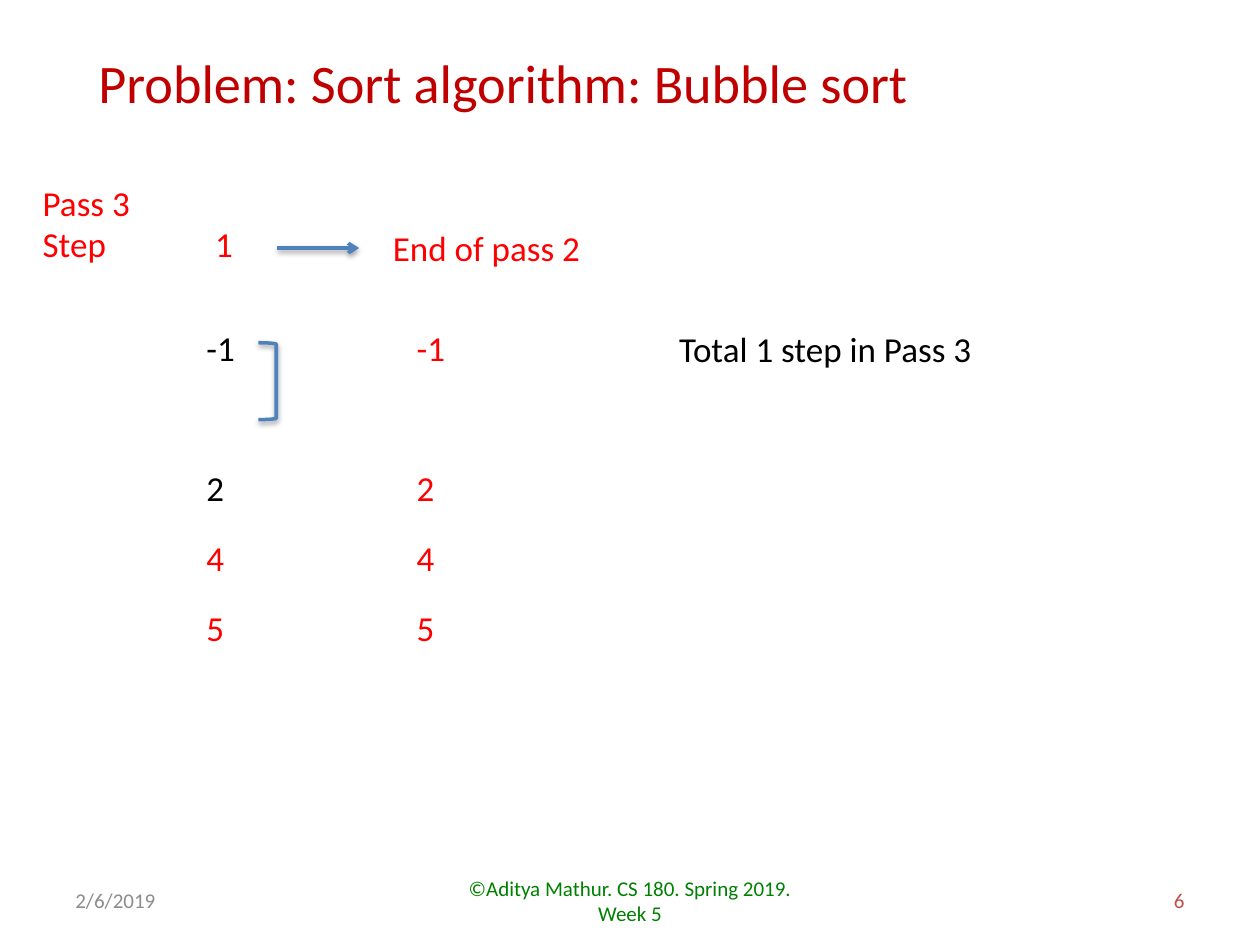
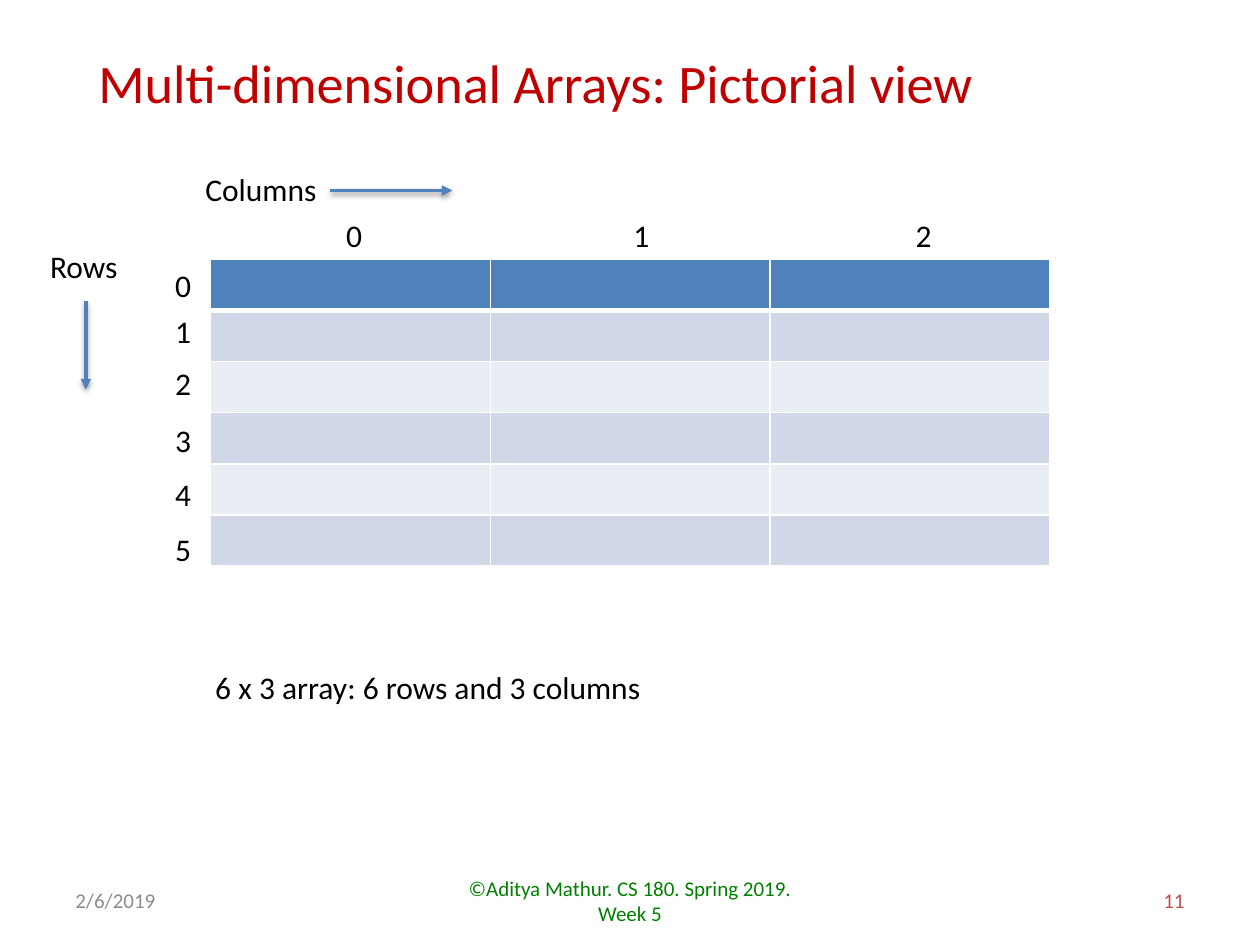
"""Two lecture slides: the last bubble sort pass and a picture of a 2D array."""
from pptx import Presentation
from pptx import util as u
from pptx.dml.color import RGBColor
from pptx.enum import shapes, text
from pptx.oxml import parse_xml
from pptx.oxml.ns import nsdecls

FONT = "Calibri"
BLACK, RED, BLUE, WHITE = "000000", "FF0000", "4F81BD", "FFFFFF"
TITLE, GREY, GREEN, BRICK = "C00000", "8C8C8C", "008000", "C0504D"
BANDS = ("D0D8E8", "E9EDF4")
TITLE_BOX = (1.73, 0.86, 22.73, 1.57)
ALIGN, ANCHOR = text.PP_ALIGN, text.MSO_ANCHOR
FOOTER_TEXT = "©Aditya Mathur. CS 180. Spring 2019. Week 5"


def rgb(value):
    """Turn a hex string into a colour."""
    return RGBColor.from_string(value)


def cm(*values):
    """Turn numbers into centimetre lengths."""
    return [u.Cm(v) for v in values]


def assign(obj, **values):
    """Set several attributes of an object."""
    for name, value in values.items():
        setattr(obj, name, value)


def write(p, words, size, color, **para):
    """Put one formatted run into a paragraph."""
    assign(p, **para)
    r = p.add_run()
    r.text = words
    assign(r.font, name=FONT, size=u.Pt(size), bold=False)
    r.font.color.rgb = rgb(color)


def label(slide, words, box, size=18, color=BLACK, wrap=False, anchor=ANCHOR.TOP, **para):
    """Add a text box with one paragraph."""
    tf = slide.shapes.add_textbox(*cm(*box)).text_frame
    assign(tf, word_wrap=wrap, vertical_anchor=anchor)
    write(tf.paragraphs[0], words, size, color, **para)
    return tf


def outline(sp):
    """Give a shape the blue line and its soft shadow."""
    sp.line.color.rgb = rgb(BLUE)
    sp.line.width = u.Pt(2)
    sp._element.spPr.append(parse_xml(
        f'<a:effectLst {nsdecls("a")}>'
        '<a:outerShdw blurRad="40000" dist="20000" dir="5400000" rotWithShape="0">'
        '<a:srgbClr val="000000"><a:alpha val="38000"/></a:srgbClr>'
        '</a:outerShdw></a:effectLst>'))


def arrow(slide, start, end, head="triangle"):
    """Draw a straight arrow between two points."""
    sp = slide.shapes.add_connector(shapes.MSO_CONNECTOR.STRAIGHT, *cm(*start, *end))
    outline(sp)
    sp.line._get_or_add_ln().append(parse_xml(f'<a:tailEnd {nsdecls("a")} type="{head}"/>'))


def frame(prs, title, number):
    """Start a slide with its title and footer."""
    slide = prs.slides.add_slide(prs.slide_layouts[5])
    sp = slide.shapes.title
    assign(sp, **dict(zip(("left", "top", "width", "height"), cm(*TITLE_BOX))))
    assign(sp.text_frame, word_wrap=True, vertical_anchor=ANCHOR.TOP,
           auto_size=text.MSO_AUTO_SIZE.NONE)
    write(sp.text_frame.paragraphs[0], title, 31, TITLE, alignment=ALIGN.LEFT)
    footer = (("2/6/2019", 1.27, 5.93, GREY, ALIGN.LEFT),
              (FOOTER_TEXT, 8.68, 8.04, GREEN, ALIGN.CENTER),
              (str(number), 18.2, 5.93, BRICK, ALIGN.RIGHT))
    for words, x, width, color, align in footer:
        label(slide, words, (x, 17.65, width, 1.01), 12, color, True,
              ANCHOR.MIDDLE, alignment=align)
    return slide


def value_column(slide, x, y, colors):
    """List the array values downwards, with a wider gap after the first."""
    spacing = {"line_spacing": u.Pt(40)}
    tf = label(slide, "-1", (x, y, 1.09, 5.87), 20, colors[0], **spacing)
    for words, color in zip("245", colors[1:]):
        write(tf.add_paragraph(), words, 20, color, **spacing)
    tf.paragraphs[1].space_before = u.Pt(40)


def sort_pass(slide, x, y):
    """Draw the single step of the pass and the result it leads to."""
    heads = (("Pass 3", 0, 0, 2.31), ("Step", 0, 0.84, 1.8),
             ("1", 3.48, 0.84, 0.86), ("End of pass 2", 7.06, 0.92, 4.32))
    for words, dx, dy, width in heads:
        label(slide, words, (x + dx, y + dy, width, 1.12), 20, RED)
    label(slide, "Total 1 step in Pass 3", (x + 12.83, y + 2.95, 6.55, 1.12), 20)
    value_column(slide, x + 3.3, y + 2.36, (BLACK, BLACK, RED, RED))
    value_column(slide, x + 7.54, y + 2.36, (RED,) * 4)
    sp = slide.shapes.add_shape(shapes.MSO_SHAPE.RIGHT_BRACKET,
                                *cm(x + 4.6, y + 3.38, 0.36, 1.55))
    sp.fill.background()
    outline(sp)
    arrow(slide, (x + 4.98, y + 1.47), (x + 6.63, y + 1.47), "arrow")


def style_cell(cell, fill, bottom):
    """Give a cell white borders and a fill."""
    tc_pr = cell._tc.get_or_add_tcPr()
    for side, width in zip("LRTB", (1, 1, 1, bottom)):
        tc_pr.append(parse_xml(
            f'<a:ln{side} {nsdecls("a")} w="{u.Pt(width)}"><a:solidFill>'
            f'<a:srgbClr val="{WHITE}"/></a:solidFill></a:ln{side}>'))
    cell.fill.solid()
    cell.fill.fore_color.rgb = rgb(fill)


def array_grid(slide, x, y, width, height, rows=6, cols=3):
    """Draw the array with its row and column indices."""
    table = slide.shapes.add_table(rows, cols, *cm(x, y, width, height)).table
    for i, row in enumerate(table.rows):
        for cell in row.cells:
            style_cell(cell, BANDS[(i - 1) % 2] if i else BLUE, 1 if i else 3)
    for i, dy in enumerate((0, 0.94, 1.98, 3.13, 4.22, 5.34)):
        label(slide, str(i), (x - 0.96, y + dy, 0.84, 1.02))
    for i, dx in enumerate((2.49, 8.28, 13.97)):
        label(slide, str(i), (x + dx, y - 0.99, 0.84, 1.02))


def axes(slide, x, y):
    """Name the two directions of the array, each with an arrow."""
    label(slide, "Rows", (x, y + 1.55, 1.88, 1.02))
    arrow(slide, (x + 0.97, y + 2.77), (x + 0.97, y + 4.55))
    label(slide, "Columns", (x + 3.13, y, 2.77, 1.02))
    arrow(slide, (x + 5.9, y + 0.54), (x + 8.36, y + 0.54))


def main():
    """Build both slides and save them."""
    prs = Presentation()
    prs.slide_width, prs.slide_height = cm(25.4, 19.05)
    sort_pass(frame(prs, "Problem: Sort algorithm: Bubble sort", 6), 0.61, 3.53)
    slide = frame(prs, "Multi-dimensional Arrays: Pictorial view", 11)
    array_grid(slide, 4.24, 5.23, 16.93, 6.18)
    axes(slide, 0.76, 3.3)
    label(slide, "6 x 3 array: 6 rows and 3 columns", (4.09, 13.34, 9.19, 1.02))
    prs.save("out.pptx")


if __name__ == "__main__":
    main()
